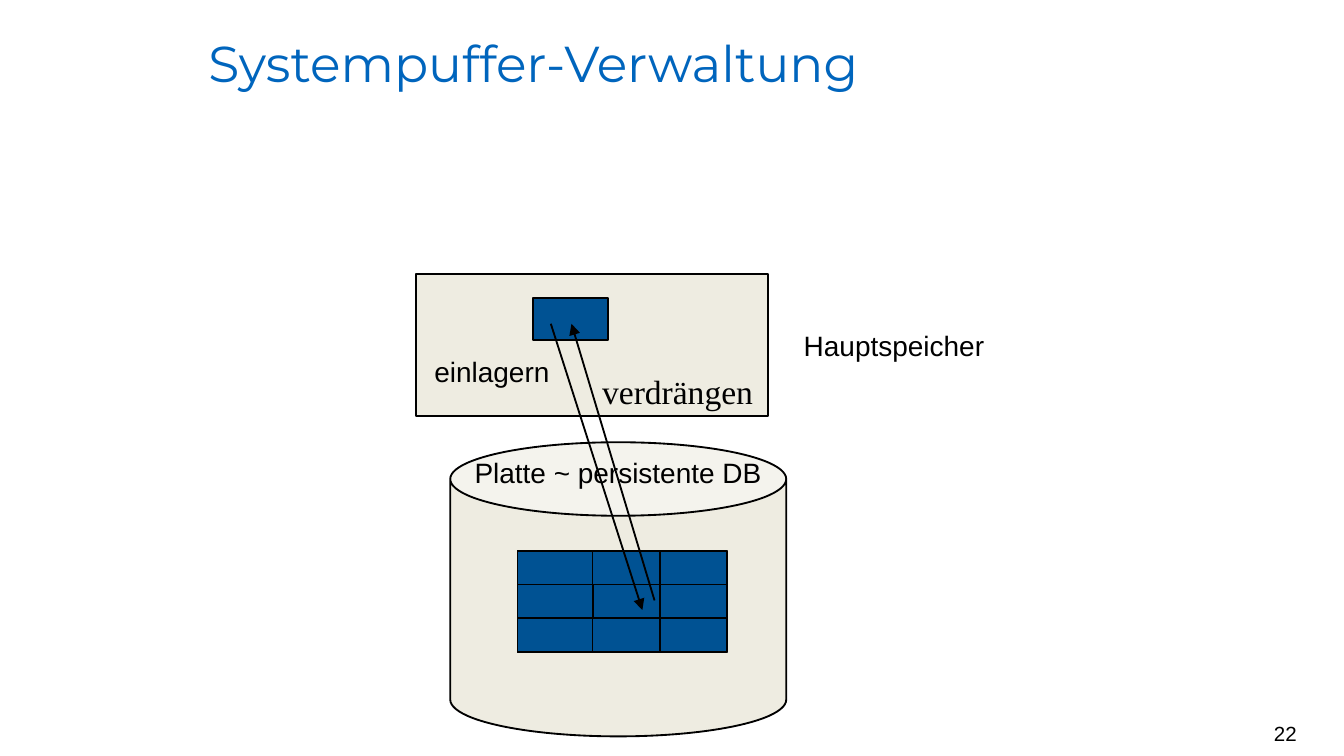
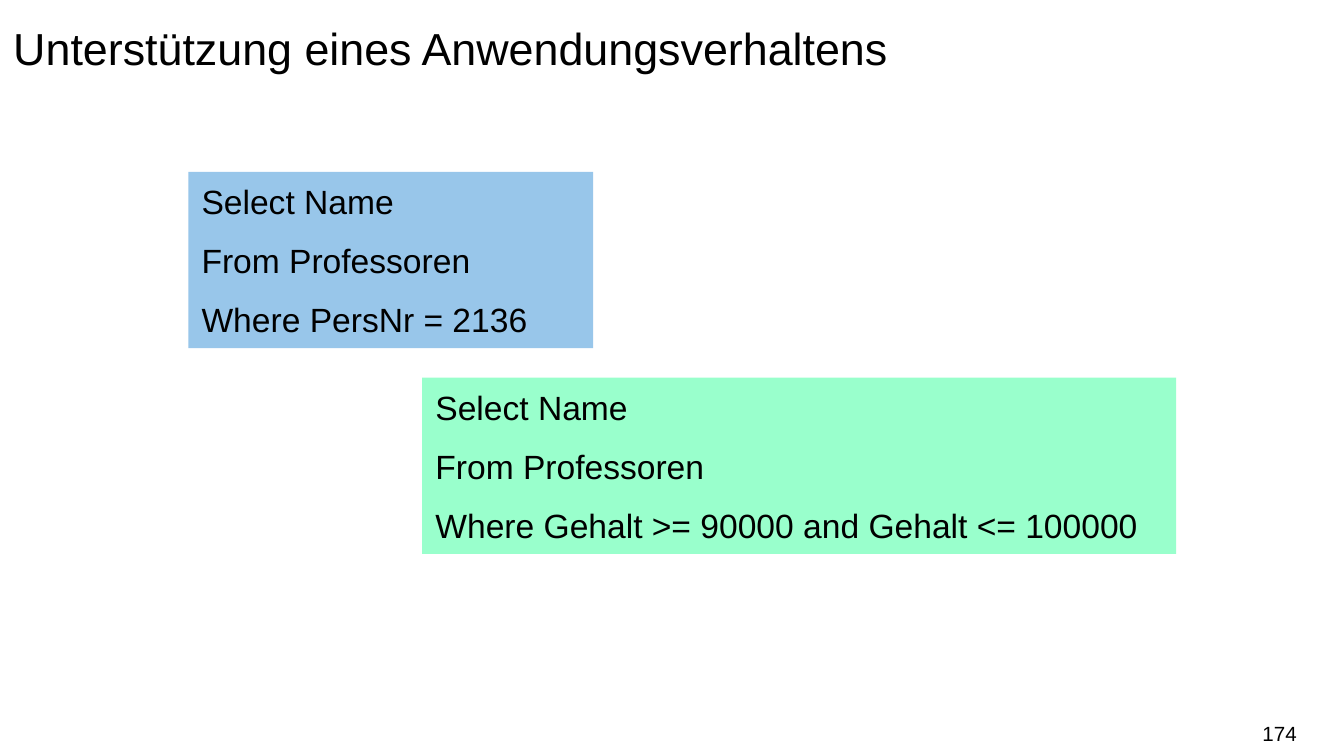
from dataclasses import dataclass
from itertools import pairwise

from lxml import etree
from pptx import Presentation
from pptx.dml.color import RGBColor
from pptx.enum.shapes import MSO_CONNECTOR as Connector, MSO_SHAPE as Preset
from pptx.enum.text import MSO_ANCHOR as Anchor, MSO_AUTO_SIZE as AutoSize, PP_ALIGN as Align
from pptx.oxml.ns import qn
from pptx.util import Cm, Pt


@dataclass(frozen=True)
class Theme:
    ink: RGBColor = RGBColor(0x00, 0x00, 0x00)
    heading: RGBColor = RGBColor(0x00, 0x65, 0xBD)
    storage: RGBColor = RGBColor(0xEE, 0xEC, 0xE1)
    page: RGBColor = RGBColor(0x00, 0x52, 0x93)
    point_query: RGBColor = RGBColor(0x98, 0xC6, 0xEA)
    range_query: RGBColor = RGBColor(0x99, 0xFF, 0xCC)
    sans: str = "Arial"
    serif: str = "Times New Roman"
    display: str = "Montserrat"
    large_title: Pt = Pt(27)
    title: Pt = Pt(24)
    body: Pt = Pt(18)
    label: Pt = Pt(15)
    number: Pt = Pt(11)
    outline: Pt = Pt(1)
    query_gap: Pt = Pt(10)


THEME = Theme()
WIDE_INSETS = (0.25, 0.13)
TIGHT_INSETS = (0.18, 0.1)
NUMBER_INSETS = (0, 0.13)


def lengths(values):
    return [Cm(value) for value in values]


def write(frame, lines, size, font=THEME.sans, color=THEME.ink, align=Align.LEFT,
          anchor=Anchor.TOP, insets=TIGHT_INSETS, gap=Pt(0)):
    """Fill a text frame with one paragraph per line, spaced by gap."""
    frame.word_wrap = True
    frame.auto_size = AutoSize.NONE
    frame.vertical_anchor = anchor
    frame.margin_left = frame.margin_right = Cm(insets[0])
    frame.margin_top = frame.margin_bottom = Cm(insets[1])
    frame.text = "\n".join(lines)
    for index, paragraph in enumerate(frame.paragraphs):
        paragraph.alignment = align
        if index:
            paragraph.space_before = gap
        paragraph.font.size = size
        paragraph.font.name = font
        paragraph.font.color.rgb = color


def place_title(slide, text, box, size, **style):
    title = slide.shapes.title
    title.left, title.top, title.width, title.height = lengths(box)
    write(title.text_frame, [text], size, **style)
    return title.text_frame.paragraphs[0]


def add_label(slide, text, box, size=THEME.label, **style):
    label = slide.shapes.add_textbox(*lengths(box))
    write(label.text_frame, [text], size, **style)


def add_page_number(slide, number):
    add_label(slide, number, (18.82, 13.49, 5.69, 0.76), THEME.number,
              align=Align.RIGHT, anchor=Anchor.MIDDLE, insets=NUMBER_INSETS)


def add_block(slide, box, fill, preset=Preset.RECTANGLE, outlined=True):
    block = slide.shapes.add_shape(preset, *lengths(box))
    block.shadow.inherit = False
    block.fill.solid()
    block.fill.fore_color.rgb = fill
    if outlined:
        block.line.color.rgb = THEME.ink
        block.line.width = THEME.outline
    else:
        block.line.fill.background()
    return block


def add_arrow(slide, start, end):
    arrow = slide.shapes.add_connector(Connector.STRAIGHT, *lengths(start + end))
    arrow.line.color.rgb = THEME.ink
    arrow.line.width = THEME.outline
    etree.SubElement(arrow.line._get_or_add_ln(), qn("a:tailEnd"), type="triangle")
    etree.SubElement(arrow._element.spPr, qn("a:effectLst"))


def add_page_grid(slide):
    """Draw the 3 x 3 stored pages as overlapping spans of columns and rows."""
    columns = (9.78, 11.2, 12.47, 13.74)
    rows = (10.41, 11.05, 11.68, 12.32)
    everything, (first, middle, last) = (0, 3), pairwise(range(4))
    spans = ((everything, everything), (first, everything), (last, everything),
             (everything, middle), (middle, middle))
    for (left, right), (top, bottom) in spans:
        add_block(slide, (columns[left], rows[top], columns[right] - columns[left],
                          rows[bottom] - rows[top]), THEME.page)


def add_query(slide, box, fill, condition):
    query = add_block(slide, box, fill, outlined=False)
    write(query.text_frame, ["Select Name", "From Professoren", condition], THEME.body,
          anchor=Anchor.MIDDLE, insets=WIDE_INSETS, gap=THEME.query_gap)


def build_buffer_slide(slide):
    place_title(slide, "Systempuffer-Verwaltung", (3.76, 0.64, 18.03, 1.22),
                THEME.large_title, font=THEME.display, color=THEME.heading,
                anchor=Anchor.BOTTOM)
    disk = add_block(slide, (8.51, 8.36, 6.35, 5.56), THEME.storage, Preset.CAN)
    disk.adjustments[0] = 0.25
    add_block(slide, (7.87, 5.18, 6.65, 2.69), THEME.storage)
    add_block(slide, (10.08, 5.64, 1.42, 0.79), THEME.page)
    add_page_grid(slide)

    add_label(slide, "verdrängen", (11.2, 6.91, 3.33, 0.97), THEME.body,
              font=THEME.serif, align=Align.JUSTIFY)
    for text, box in (
        ("Hauptspeicher", (15.01, 6.12, 3.96, 0.84)),
        ("einlagern", (8.03, 6.6, 2.84, 0.84)),
        ("Platte ~ persistente DB", (8.79, 8.51, 5.89, 0.84)),
    ):
        add_label(slide, text, box, align=Align.JUSTIFY)

    add_arrow(slide, (10.41, 6.12), (12.14, 11.53))
    add_arrow(slide, (12.37, 11.35), (10.8, 6.12))
    add_page_number(slide, "22")


def build_query_slide(slide):
    heading = place_title(slide, "Unterstützung eines Anwendungsverhaltens",
                          (0, 0, 25.4, 2.39), THEME.title, insets=WIDE_INSETS)
    heading.line_spacing = 1.25
    add_query(slide, (3.56, 3.25, 7.65, 3.33), THEME.point_query, "Where PersNr = 2136")
    add_query(slide, (7.98, 7.14, 14.25, 3.33), THEME.range_query,
              "Where Gehalt >= 90000 and Gehalt <= 100000")
    add_page_number(slide, "174")


def main():
    deck = Presentation()
    deck.slide_width, deck.slide_height = Cm(25.4), Cm(14.29)
    title_only = deck.slide_layouts[5]
    for build in (build_buffer_slide, build_query_slide):
        build(deck.slides.add_slide(title_only))
    deck.save("out.pptx")


if __name__ == "__main__":
    main()
